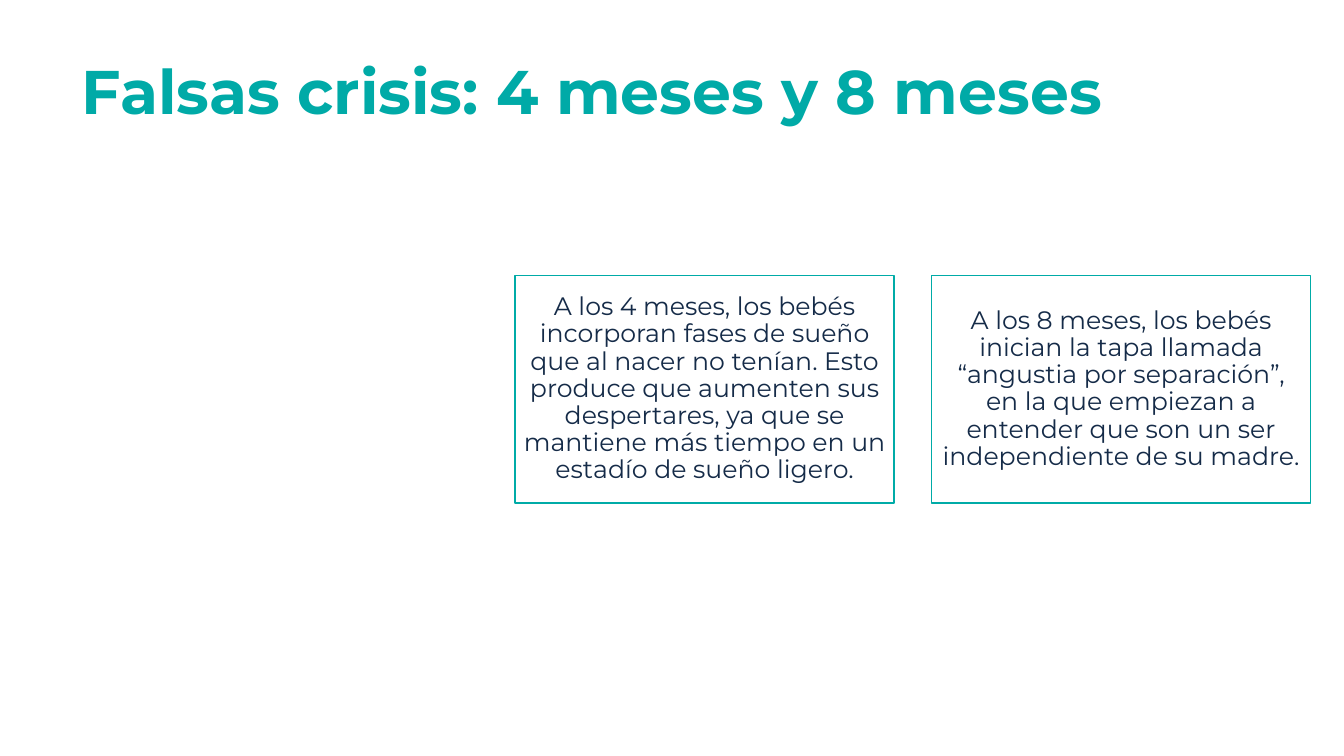
"""Build a slide that explains the false crises at four and eight months."""
from dataclasses import dataclass

from pptx import Presentation
from pptx.dml.color import RGBColor
from pptx.enum.shapes import MSO_SHAPE
from pptx.enum.text import MSO_ANCHOR, PP_ALIGN
from pptx.slide import Slide
from pptx.text.text import TextFrame
from pptx.util import Pt

COLOURS = {"title": "00AAA7", "border": "00ABA7", "text": "152B48", "card": "FFFFFF"}
FONT = "Montserrat"
CARD_LEFT, CARD_TOP, CARD_WIDTH, CARD_HEIGHT = 368, 196.6, 270.7, 162.7
CARD_STEP = 297.5
CARD_INSET = 5


@dataclass
class Card:
    """A bordered card holding one paragraph."""
    column: int
    text: str


CARDS = [
    Card(0, "A los 4 meses, los bebés incorporan fases de sueño que al nacer no tenían. "
            "Esto produce que aumenten sus despertares, ya que se mantiene más tiempo "
            "en un estadío de sueño ligero."),
    Card(1, "A los 8 meses, los bebés inician la tapa llamada “angustia por separación”, "
            "en la que empiezan a entender que son un ser independiente de su madre."),
]


def colour(name: str) -> RGBColor:
    """Return the named colour."""
    return RGBColor.from_string(COLOURS[name])


def write_text(frame: TextFrame, text: str, size: float, colour_name: str,
               alignment: PP_ALIGN, bold: bool = False) -> None:
    """Write one vertically centred paragraph into a frame."""
    frame.word_wrap = True
    frame.vertical_anchor = MSO_ANCHOR.MIDDLE
    paragraph = frame.paragraphs[0]
    paragraph.alignment = alignment
    paragraph.line_spacing = 0.9
    run = paragraph.add_run()
    run.text = text
    run.font.name = FONT
    run.font.size = Pt(size)
    run.font.bold = bold
    run.font.color.rgb = colour(colour_name)


def add_title(slide: Slide, text: str) -> None:
    """Place and fill the title placeholder."""
    title = slide.shapes.title
    title.left, title.top, title.width, title.height = Pt(51.1), Pt(15.1), Pt(828), Pt(104.4)
    write_text(title.text_frame, text, 44, "title", PP_ALIGN.LEFT, bold=True)


def add_card(slide: Slide, card: Card) -> None:
    """Draw a card in its column."""
    shape = slide.shapes.add_shape(
        MSO_SHAPE.RECTANGLE, Pt(CARD_LEFT + card.column * CARD_STEP), Pt(CARD_TOP),
        Pt(CARD_WIDTH), Pt(CARD_HEIGHT))
    shape.shadow.inherit = False
    shape.fill.solid()
    shape.fill.fore_color.rgb = colour("card")
    shape.line.color.rgb = colour("border")
    shape.line.width = Pt(1)
    frame = shape.text_frame
    frame.margin_left = frame.margin_right = Pt(CARD_INSET)
    frame.margin_top = frame.margin_bottom = Pt(CARD_INSET)
    write_text(frame, card.text, 18, "text", PP_ALIGN.CENTER)


def main() -> None:
    """Build and save the presentation."""
    presentation = Presentation()
    presentation.slide_width, presentation.slide_height = Pt(960), Pt(540)
    slide = presentation.slides.add_slide(presentation.slide_layouts[5])
    add_title(slide, "Falsas crisis: 4 meses y 8 meses")
    for card in CARDS:
        add_card(slide, card)
    presentation.save("out.pptx")


if __name__ == "__main__":
    main()
